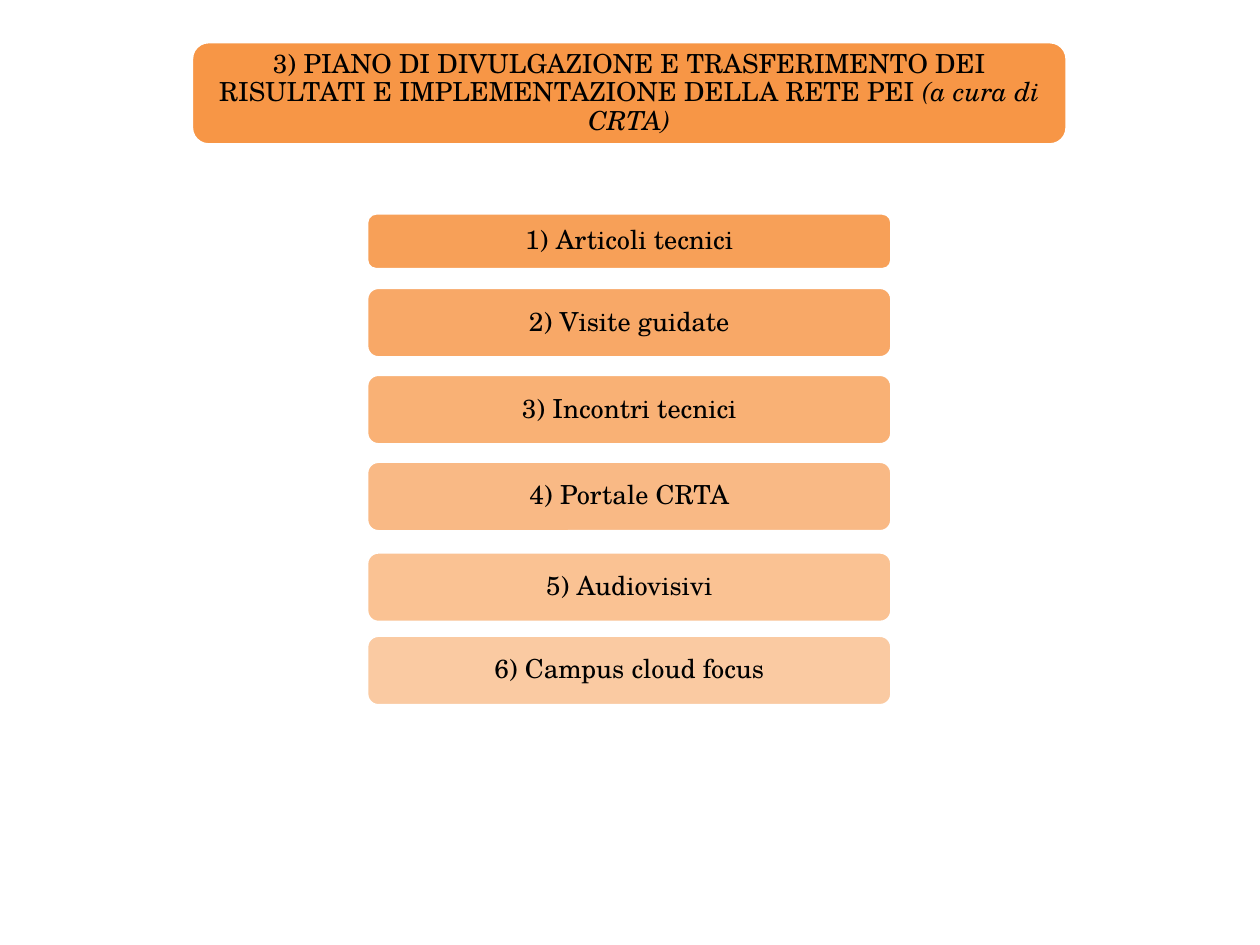
"""Build the slide on the plan for sharing results."""
from dataclasses import dataclass

from lxml import etree
from pptx import Presentation
from pptx.dml.color import RGBColor
from pptx.enum.shapes import MSO_SHAPE
from pptx.enum.text import MSO_ANCHOR, MSO_AUTO_SIZE, PP_ALIGN
from pptx.oxml.ns import qn
from pptx.shapes.autoshape import Shape
from pptx.slide import Slide
from pptx.util import Pt

ROUNDED = MSO_SHAPE.ROUNDED_RECTANGLE
MIDDLE = MSO_ANCHOR.MIDDLE
NO_FIT = MSO_AUTO_SIZE.NONE
CENTER = PP_ALIGN.CENTER
TITLE_ONLY = 5


@dataclass(frozen=True)
class Theme:
    font: str = "TeX Gyre Schola"
    size: float = 15
    line_spacing: float = 0.9
    inset: float = 4.2
    outline_width: float = 2
    accent: RGBColor = RGBColor(0xF7, 0x96, 0x46)
    outline: RGBColor = RGBColor(0xFF, 0xFF, 0xFF)
    ink: RGBColor = RGBColor(0, 0, 0)


@dataclass(frozen=True)
class Area:
    left: float
    top: float
    width: float
    height: float


@dataclass(frozen=True)
class TextRun:
    text: str
    italic: bool = False


@dataclass(frozen=True)
class Activity:
    label: str
    top: float
    height: float = 40.3


THEME = Theme()
HEADER = Area(109.4, 23.8, 500.4, 59)
HEADER_TEXT = Area(112.3, 26.6, 494.6, 53.3)
HEADER_RUNS = [
    TextRun("3) PIANO DI DIVULGAZIONE E TRASFERIMENTO DEI RISULTATI "
            "E IMPLEMENTAZIONE DELLA RETE PEI "),
    TextRun("(a cura di CRTA)", italic=True),
]
ACTIVITY_LEFT, ACTIVITY_WIDTH = 209.5, 300.2
FIRST_OPACITY, OPACITY_STEP = 90, 8
ACTIVITIES = [
    Activity("Articoli tecnici", 121.7, 32.4),
    Activity("Visite guidate", 164.2),
    Activity("Incontri tecnici", 213.9),
    Activity("Portale CRTA", 263.6),
    Activity("Audiovisivi", 315.4),
    Activity("Campus cloud focus", 363),
]


def add_panel(page: Slide, area: Area, opacity: int = 100) -> Shape:
    """Add a rounded panel in the accent colour."""
    panel = page.shapes.add_shape(ROUNDED, Pt(area.left), Pt(area.top),
                                  Pt(area.width), Pt(area.height))
    panel.shadow.inherit = False
    panel.fill.solid()
    panel.fill.fore_color.rgb = THEME.accent
    panel.line.color.rgb = THEME.outline
    panel.line.width = Pt(THEME.outline_width)
    if opacity < 100:
        color = panel.element.spPr.find(qn("a:solidFill")).find(qn("a:srgbClr"))
        etree.SubElement(color, qn("a:alpha"), val=str(opacity * 1000))
    return panel


def write_text(box: Shape, runs: list[TextRun]) -> None:
    """Write one centred paragraph run by run."""
    frame = box.text_frame
    frame.word_wrap = True
    frame.auto_size = NO_FIT
    frame.vertical_anchor = MIDDLE
    frame.margin_left = frame.margin_right = Pt(THEME.inset)
    frame.margin_top = frame.margin_bottom = Pt(THEME.inset)
    para = frame.paragraphs[0]
    para.alignment = CENTER
    para.line_spacing = THEME.line_spacing
    para.space_before = Pt(0)
    for run in runs:
        span = para.add_run()
        span.text = run.text
        span.font.name = THEME.font
        span.font.size = Pt(THEME.size)
        span.font.italic = run.italic
        span.font.color.rgb = THEME.ink


def add_header(page: Slide) -> None:
    """Place the title over its panel."""
    add_panel(page, HEADER)
    title = page.shapes.title
    title.left, title.top = Pt(HEADER_TEXT.left), Pt(HEADER_TEXT.top)
    title.width, title.height = Pt(HEADER_TEXT.width), Pt(HEADER_TEXT.height)
    title.element.getparent().append(title.element)
    write_text(title, HEADER_RUNS)


def add_activities(page: Slide) -> None:
    """Add the numbered activities in fading panels."""
    for index, activity in enumerate(ACTIVITIES):
        area = Area(ACTIVITY_LEFT, activity.top, ACTIVITY_WIDTH, activity.height)
        panel = add_panel(page, area, FIRST_OPACITY - OPACITY_STEP * index)
        write_text(panel, [TextRun(f"{index + 1}) {activity.label}")])


def main() -> None:
    """Build and save the deck."""
    deck = Presentation()
    deck.slide_width, deck.slide_height = Pt(720), Pt(540)
    page = deck.slides.add_slide(deck.slide_layouts[TITLE_ONLY])
    add_header(page)
    add_activities(page)
    deck.save("out.pptx")


if __name__ == "__main__":
    main()
